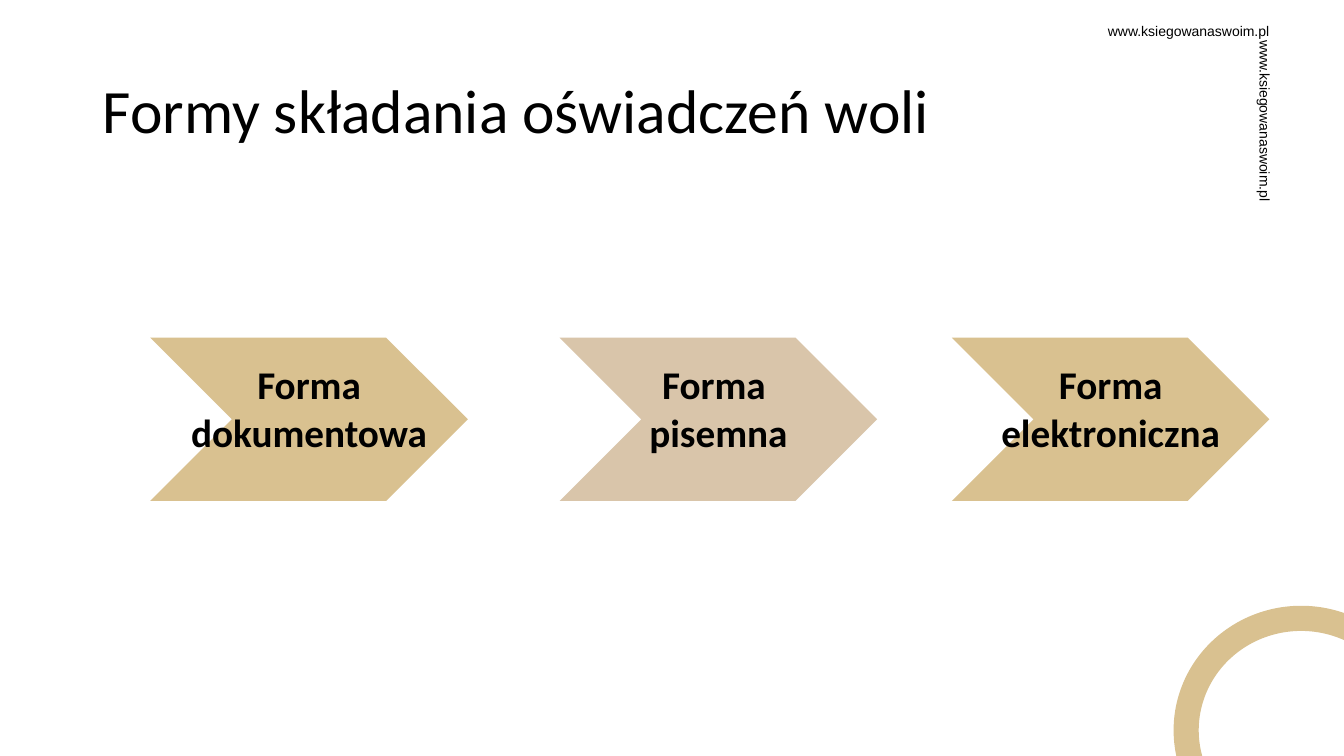
from dataclasses import dataclass

from pptx import Presentation
from pptx.dml.color import RGBColor
from pptx.enum.shapes import MSO_SHAPE
from pptx.enum.text import MSO_ANCHOR, MSO_AUTO_SIZE, PP_ALIGN
from pptx.util import Inches, Pt


@dataclass(frozen=True)
class Theme:
    text: RGBColor = RGBColor(0x00, 0x00, 0x00)
    gold: RGBColor = RGBColor(0xD9, 0xC1, 0x90)
    beige: RGBColor = RGBColor(0xD9, 0xC5, 0xAA)
    background: RGBColor = RGBColor(0xFF, 0xFF, 0xFF)
    title_size: Pt = Pt(44)
    label_size: Pt = Pt(28)
    address_size: Pt = Pt(10)
    main_font: str = "Calibri"
    address_font: str = "Arial"


theme = Theme()
presentation = Presentation()
presentation.slide_width = Inches(13.33)
presentation.slide_height = Inches(7.5)
slide = presentation.slides.add_slide(presentation.slide_layouts[6])
slide.background.fill.solid()
slide.background.fill.fore_color.rgb = theme.background


def add_filled_shape(preset, left, top, width, height, color):
    shape = slide.shapes.add_shape(
        preset, Inches(left), Inches(top), Inches(width), Inches(height)
    )
    shape.shadow.inherit = False
    shape.fill.solid()
    shape.fill.fore_color.rgb = color
    shape.line.fill.background()
    return shape


def add_text(text, left, top, width, height, font_name, size, bold=False):
    text_box = slide.shapes.add_textbox(
        Inches(left), Inches(top), Inches(width), Inches(height)
    )
    text_frame = text_box.text_frame
    text_frame.word_wrap = True
    text_frame.auto_size = MSO_AUTO_SIZE.SHAPE_TO_FIT_TEXT
    text_frame.text = text
    for run in text_frame.paragraphs[0].runs:
        run.font.name = font_name
        run.font.size = size
        run.font.bold = bold
        run.font.color.rgb = theme.text
    return text_box


title = add_text(
    "Formy składania oświadczeń woli",
    0.92, 0.4, 11.5, 1.45, theme.main_font, theme.title_size,
)
title.text_frame.auto_size = MSO_AUTO_SIZE.NONE
title.text_frame.vertical_anchor = MSO_ANCHOR.MIDDLE
title.text_frame.paragraphs[0].line_spacing = 0.9

forms = [
    ("Forma dokumentowa", 1.49, theme.gold),
    ("Forma \vpisemna", 5.55, theme.beige),
    ("Forma elektroniczna", 9.44, theme.gold),
]
chevron_width, label_width = 3.15, 2.88
label_inset = (chevron_width - label_width) / 2
for form_name, left, color in forms:
    add_filled_shape(MSO_SHAPE.CHEVRON, left, 3.35, chevron_width, 1.62, color)
    label = add_text(
        form_name, left + label_inset, 3.53, label_width, 1.04,
        theme.main_font, theme.label_size, bold=True,
    )
    label.text_frame.paragraphs[0].alignment = PP_ALIGN.CENTER

ring = add_filled_shape(MSO_SHAPE.DONUT, 11.64, 6.01, 2.53, 2.47, theme.gold)
ring.adjustments[0] = 0.101

for left, top, rotation in [(8.8, 3.91, 90), (10.89, 0.17, 0)]:
    address = add_text(
        "www.ksiegowanaswoim.pl", left, top, 7.49, 0.27,
        theme.address_font, theme.address_size,
    )
    address.rotation = rotation

presentation.save("out.pptx")
